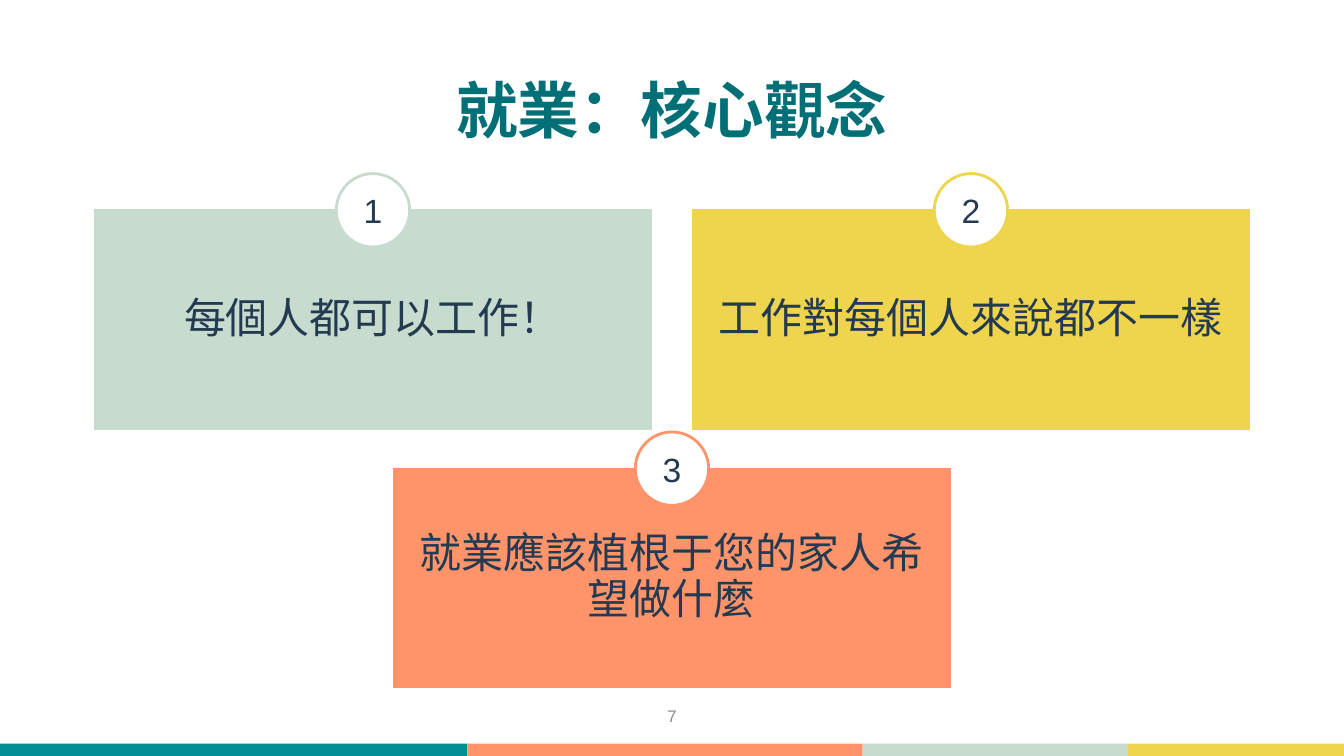
from pptx import Presentation
from pptx.dml.color import RGBColor
from pptx.enum.shapes import MSO_SHAPE
from pptx.enum.text import MSO_ANCHOR, PP_ALIGN
from pptx.util import Cm, Pt

PAGE_WIDTH, PAGE_HEIGHT = 33.87, 19.05
CARD_WIDTH, CARD_HEIGHT, CARD_GAP = 14.12, 5.59, 0.95
BADGE_SIZE = 1.85
TEAL, CORAL, SAGE, YELLOW = "028D94", "FF946B", "C7DCCF", "EFD54E"
NAVY, WHITE = "243A50", "FFFFFF"


def color(value):
    """Turn a hex string into a colour."""
    return RGBColor.from_string(value)


def add_block(page, kind, box, fill, line=None, line_width=1):
    """Add a flat shape in a box of left, top, width and height."""
    shape = page.shapes.add_shape(kind, *map(Cm, box))
    shape.shadow.inherit = False
    shape.fill.solid()
    shape.fill.fore_color.rgb = color(fill)
    if line:
        shape.line.color.rgb = color(line)
        shape.line.width = Pt(line_width)
    else:
        shape.line.fill.background()
    return shape


def write(shape, text, size, ink, font="Arial", inset=0.0, bold=False):
    """Write one centred paragraph into a shape and return it."""
    frame = shape.text_frame
    frame.word_wrap = True
    frame.vertical_anchor = MSO_ANCHOR.MIDDLE
    frame.margin_left = frame.margin_right = Cm(inset)
    frame.margin_top = frame.margin_bottom = Cm(inset)
    para = frame.paragraphs[0]
    para.text = text
    para.alignment = PP_ALIGN.CENTER
    para.font.name = font
    para.font.size = Pt(size)
    para.font.bold = bold
    para.font.color.rgb = color(ink)
    return para


def add_title(page, box, text):
    """Place the title placeholder in the box."""
    title = page.shapes.title
    title.left, title.top, title.width, title.height = map(Cm, box)
    para = write(title, text, 44, "017076", inset=0.13, bold=True)
    para.line_spacing = 0.9


def add_footer(page, box, number):
    """Draw the colour band along the box and the page number above it."""
    left, top, width, height = box
    edges = [0, 11.78, 21.74, 28.43, width]
    for start, end, fill in zip(edges, edges[1:], (TEAL, CORAL, SAGE, YELLOW)):
        add_block(page, MSO_SHAPE.RECTANGLE, (left + start, top, end - start, height), fill)
    label_width = 7.62
    label_left = left + (width - label_width) / 2
    label = page.shapes.add_textbox(Cm(label_left), Cm(top - 1.22), Cm(label_width), Cm(1.02))
    write(label, number, 12, "8C8C8C")


def add_card(page, box, number, text, fill):
    """Draw a card with its numbered badge centred on the top edge."""
    left, top, width, height = box
    card = add_block(page, MSO_SHAPE.RECTANGLE, box, fill, WHITE)
    para = write(card, text, 30, NAVY, "Noto Sans CJK SC", 0.3)
    para.line_spacing = 0.9
    para.space_after = Pt(10.5)
    badge_box = (left + (width - BADGE_SIZE) / 2, top - BADGE_SIZE / 2 + 0.04, BADGE_SIZE, BADGE_SIZE)
    badge = add_block(page, MSO_SHAPE.OVAL, badge_box, WHITE, fill, 2)
    badge.text_frame.word_wrap = True
    write(badge, str(number), 24, NAVY)


def add_cards(page, box, cards):
    """Place two cards side by side and the third centred below them."""
    left, top, width, height = box
    right = left + width - CARD_WIDTH
    middle = left + (width - CARD_WIDTH) / 2
    below = top + height - CARD_HEIGHT
    corners = [(left, top), (right, top), (middle, below)]
    for number, (corner, (text, fill)) in enumerate(zip(corners, cards), 1):
        add_card(page, (*corner, CARD_WIDTH, CARD_HEIGHT), number, text, fill)


def main():
    """Build the slide and save the deck."""
    deck = Presentation()
    deck.slide_width, deck.slide_height = Cm(PAGE_WIDTH), Cm(PAGE_HEIGHT)
    page = deck.slides.add_slide(deck.slide_layouts[5])
    add_footer(page, (0, 18.74, PAGE_WIDTH, 0.35), "7")
    add_title(page, (2.33, 1.02, 29.21, 3.68), "就業：核心觀念")
    cards_width = 2 * CARD_WIDTH + CARD_GAP
    cards_left = (PAGE_WIDTH - cards_width) / 2
    add_cards(page, (cards_left, 5.26, cards_width, 12.1), [
        ("每個人都可以工作！", SAGE),
        ("工作對每個人來說都不一樣", YELLOW),
        ("就業應該植根于您的家人希望做什麼", CORAL),
    ])
    deck.save("out.pptx")


if __name__ == "__main__":
    main()
